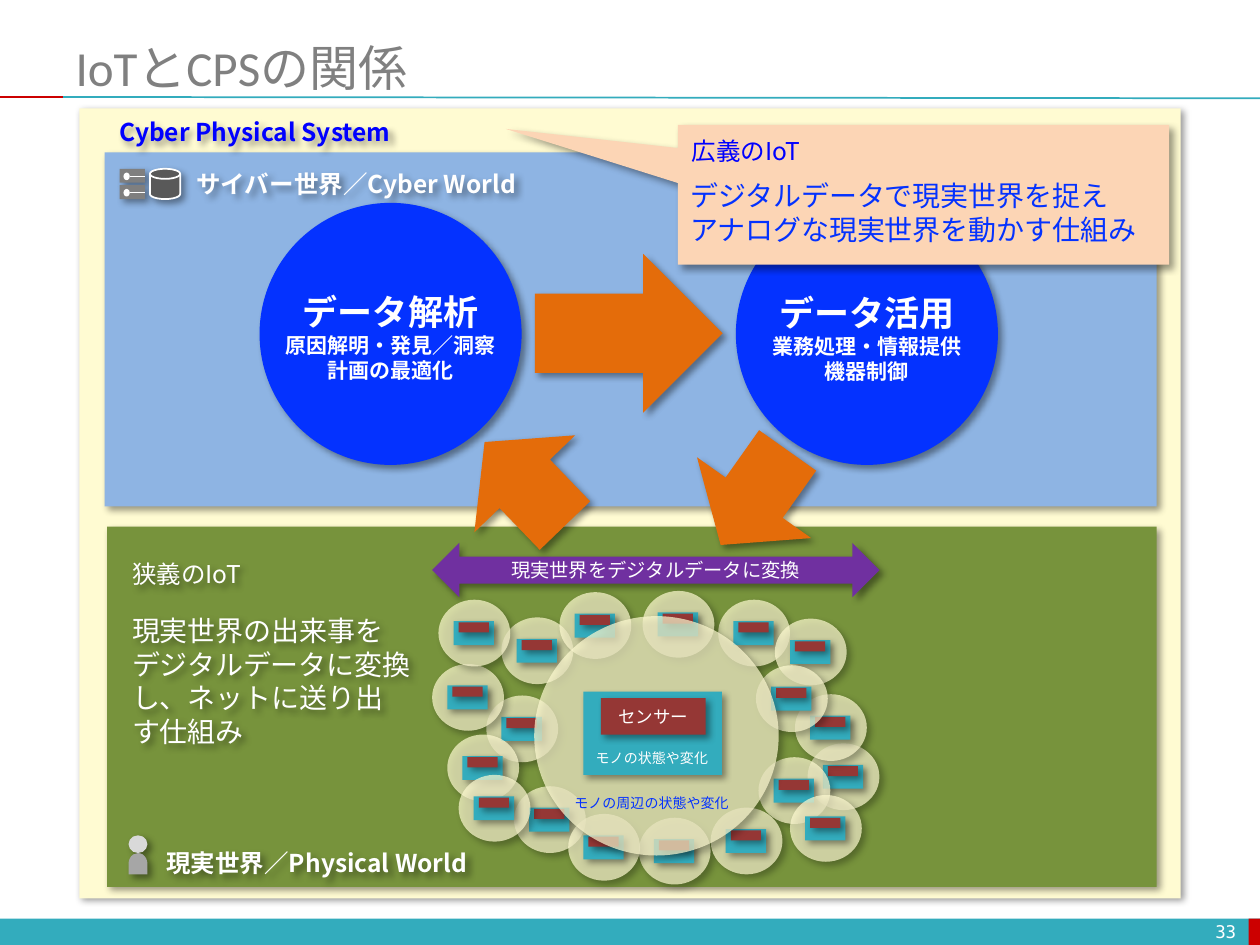
from lxml.etree import SubElement
from pptx import Presentation
from pptx.dml.color import RGBColor
from pptx.enum.lang import MSO_LANGUAGE_ID as Language
from pptx.enum.shapes import MSO_CONNECTOR, MSO_SHAPE as Shape
from pptx.enum.text import MSO_ANCHOR as Anchor, PP_ALIGN as Align
from pptx.oxml.ns import qn
from pptx.util import Inches, Pt

COLORS = {
    "teal": "33ACBD", "red": "CC0000", "cream": "FFFBD2", "title": "808080",
    "white": "FFFFFF", "sky": "8EB4E3", "green": "77933C", "head": "D9D9D9",
    "body": "A6A6A6", "server": "7F7F7F", "disk": "595959", "purple": "7030A0",
    "blue": "0432FF", "pure_blue": "0000FF", "orange": "E46C0A",
    "peach": "FCD5B5", "sensor": "953735", "black": "000000",
}
JAPANESE_FONT = "Noto Sans CJK JP"
NODES = [
    (5.7, 4.76), (6.41, 5.9), (3.86, 5.52), (3.43, 5.27), (6.15, 4.91),
    (3.98, 4.9), (4.44, 4.7), (6.31, 5.51), (3.55, 5.83), (4.08, 6.24),
    (5.1, 4.69), (6, 5.28), (6.02, 6.01), (5.07, 6.49), (4.51, 6.46),
    (5.64, 6.41),
]
FRONT_NODES = [(6.27, 6.31), (3.48, 4.76), (3.64, 6.15)]


def rgb(name):
    return RGBColor.from_string(COLORS[name])


def add_color(parent, name, alpha):
    color = SubElement(parent, qn("a:srgbClr"), val=COLORS[name])
    SubElement(color, qn("a:alpha"), val=str(alpha * 1000))


def add_shadow(shape):
    shape.shadow.inherit = False
    effects = shape._element.spPr.find(qn("a:effectLst"))
    shadow = SubElement(effects, qn("a:outerShdw"), blurRad=str(Pt(4)),
                        dist=str(Pt(3)), dir="2700000", algn="tl", rotWithShape="0")
    add_color(shadow, "black", 40)


def add_shape(parent, kind, at, fill, shadow=True, rotation=0, alpha=None, line=None):
    shape = parent.shapes.add_shape(kind, *map(Inches, at))
    shape.rotation = rotation
    shape.fill.solid()
    shape.fill.fore_color.rgb = rgb(fill)
    if alpha:
        color = shape._element.spPr.find(qn("a:solidFill"))[0]
        SubElement(color, qn("a:alpha"), val=str(alpha * 1000))
    if line:
        shape.line.color.rgb = rgb(line)
        shape.line.width = Pt(1)
    else:
        shape.line.fill.background()
    if shadow:
        add_shadow(shape)
    else:
        shape.shadow.inherit = False
    return shape


def add_line(parent, start, end, color, width):
    line = parent.shapes.add_connector(
        MSO_CONNECTOR.STRAIGHT, *map(Inches, start + end))
    line.line.color.rgb = rgb(color)
    line.line.width = Pt(width)
    SubElement(line._element.spPr, qn("a:effectLst"))


def write(shape, lines, color, sizes, bold=False, align=Align.LEFT,
          anchor=Anchor.TOP, wrap=True, font=JAPANESE_FONT):
    """Fill a shape with lines; the last size serves all later lines."""
    frame = shape.text_frame
    frame.word_wrap = wrap
    frame.vertical_anchor = anchor
    for index, line in enumerate(lines):
        paragraph = frame.add_paragraph() if index else frame.paragraphs[0]
        paragraph.alignment = align
        span = paragraph.add_run()
        span.text = line
        size = sizes[min(index, len(sizes) - 1)]
        formats = {"name": font, "size": Pt(size), "bold": bold,
                   "language_id": Language.JAPANESE}
        for name, value in formats.items():
            setattr(span.font, name, value)
        span.font.color.rgb = rgb(color)
        SubElement(span.font._element, qn("a:ea"), typeface=JAPANESE_FONT)


def add_text(parent, at, lines, color, sizes, shadow=False, **formats):
    box = parent.shapes.add_textbox(*map(Inches, at))
    write(box, lines, color, sizes, **formats)
    if shadow:
        add_shadow(box)


def add_frame(page):
    add_shape(page, Shape.RECTANGLE, (0, 7.29, 10, 0.22), "teal", False)
    add_shape(page, Shape.RECTANGLE, (9.91, 7.29, 0.1, 0.22), "red", False)
    add_line(page, (0.5, 0.77), (10, 0.78), "teal", 1)
    add_line(page, (0, 0.77), (0.5, 0.77), "red", 1)
    title = page.shapes.title
    bounds = {"left": 0.5, "top": 0.3, "width": 9.5, "height": 0.46}
    for name, value in bounds.items():
        setattr(title, name, Inches(value))
    write(title, ["IoTとCPSの関係"], "title", [28], anchor=Anchor.MIDDLE, font="Calibri")
    add_text(page, (7.58, 7.27, 2.33, 0.24), ["33"], "white", [10], align=Align.RIGHT,
             anchor=Anchor.MIDDLE, font="DejaVu Sans Mono")


def add_person_icon(page):
    icon = page.shapes.add_group_shape()
    add_shape(icon, Shape.OVAL, (1.02, 6.63, 0.15, 0.14), "head")
    add_shape(icon, Shape.FLOWCHART_DELAY, (1.01, 6.78, 0.17, 0.15), "body", rotation=270)


def add_server_icon(page):
    icon = page.shapes.add_group_shape()
    for top in (1.34, 1.47):
        add_shape(icon, Shape.RECTANGLE, (0.95, top, 0.2, 0.11), "server")
        add_shape(icon, Shape.OVAL, (0.98, top + 0.03, 0.05, 0.06), "white", False)
        add_line(icon, (1.03, top + 0.06), (1.15, top + 0.06), "white", 0.75)
    add_shape(icon, Shape.FLOWCHART_MAGNETIC_DISK, (1.19, 1.34, 0.24, 0.24),
              "disk", line="white")


def add_node(page, left, top):
    node = page.shapes.add_group_shape()
    add_shape(node, Shape.OVAL, (left, top, 0.57, 0.53), "cream", alpha=70)
    add_shape(node, Shape.RECTANGLE, (left + 0.12, top + 0.17, 0.32, 0.19), "teal")
    add_shape(node, Shape.RECTANGLE, (left + 0.16, top + 0.18, 0.24, 0.08), "sensor")


def add_main_node(page):
    node = page.shapes.add_group_shape()
    add_shape(node, Shape.OVAL, (4.24, 4.89, 1.94, 1.9), "cream", alpha=70)
    add_shape(node, Shape.RECTANGLE, (4.63, 5.49, 1.1, 0.66), "teal")
    sensor = add_shape(node, Shape.RECTANGLE, (4.77, 5.54, 0.83, 0.29), "sensor")
    write(sensor, ["センサー"], "white", [10], align=Align.CENTER, anchor=Anchor.MIDDLE)
    add_text(node, (4.63, 5.9, 1.1, 0.24), ["モノの状態や変化"], "white", [8], wrap=False)
    add_text(node, (4.46, 6.26, 1.44, 0.24), ["モノの周辺の状態や変化"], "blue", [8],
             wrap=False)


def add_worlds(page):
    add_shape(page, Shape.RECTANGLE, (0.63, 0.86, 8.74, 6.27), "cream")
    add_shape(page, Shape.RECTANGLE, (0.83, 1.21, 8.35, 2.81), "sky")
    add_shape(page, Shape.RECTANGLE, (0.85, 4.18, 8.33, 2.86), "green")
    add_person_icon(page)
    add_server_icon(page)
    labels = [
        ((1.22, 6.68, 2.7, 0.34), "現実世界／Physical World", "white", True),
        ((1.46, 1.29, 2.85, 0.34), "サイバー世界／Cyber World", "white", True),
        ((0.95, 4.39, 1.14, 0.34), "狭義のIoT", "white", False),
        ((0.85, 0.88, 2.53, 0.34), "Cyber Physical System", "pure_blue", True),
    ]
    for at, label, color, bold in labels:
        add_text(page, at, [label], color, [14], shadow=True, bold=bold, wrap=False)
    add_text(page, (0.95, 4.82, 2.41, 1.18),
             ["現実世界の出来事をデジタルデータに変換し、ネットに送り出す仕組み"],
             "white", [16], shadow=True)


def add_cycle(page):
    banner = add_shape(page, Shape.LEFT_RIGHT_ARROW, (3.43, 4.31, 3.55, 0.43), "purple")
    write(banner, ["現実世界をデジタルデータに変換"], "white", [11],
          align=Align.CENTER, anchor=Anchor.MIDDLE)
    circles = [
        (2.06, 2.25, ["データ解析", "原因解明・発見／洞察", "計画の最適化"]),
        (5.84, 2.26, ["データ活用", "業務処理・情報提供", "機器制御"]),
    ]
    for left, text_top, lines in circles:
        add_shape(page, Shape.OVAL, (left, 1.61, 2.08, 2.08), "blue")
        add_text(page, (left, text_top, 2.08, 0.84), lines, "white", [20, 12],
                 bold=True, align=Align.CENTER, anchor=Anchor.MIDDLE)
    arrows = [((5.43, 3.49, 1.11, 0.92), 215.3), ((4.36, 1.9, 1.26, 1.49), 90),
              ((3.61, 3.38, 1.11, 0.92), 316.1)]
    for at, rotation in arrows:
        add_shape(page, Shape.UP_ARROW, at, "orange", rotation=rotation)


def add_callout(page):
    callout = add_shape(page, Shape.RECTANGULAR_CALLOUT, (5.38, 0.99, 3.9, 1.11), "peach")
    callout.adjustments[0], callout.adjustments[1] = -0.85, -0.47
    add_text(page, (5.39, 1.03, 1.14, 0.34), ["広義のIoT"], "pure_blue", [14], wrap=False)
    add_text(page, (5.38, 1.37, 3.92, 0.64),
             ["デジタルデータで現実世界を捉え", "アナログな現実世界を動かす仕組み"],
             "blue", [16])


def main():
    deck = Presentation()
    deck.slide_width, deck.slide_height = Inches(10), Inches(7.5)
    page = deck.slides.add_slide(deck.slide_layouts[5])
    add_frame(page)
    add_worlds(page)
    add_cycle(page)
    add_callout(page)
    # Sensor nodes behind and in front of the main one
    for left, top in NODES:
        add_node(page, left, top)
    add_main_node(page)
    for left, top in FRONT_NODES:
        add_node(page, left, top)
    deck.save("out.pptx")


if __name__ == "__main__":
    main()
